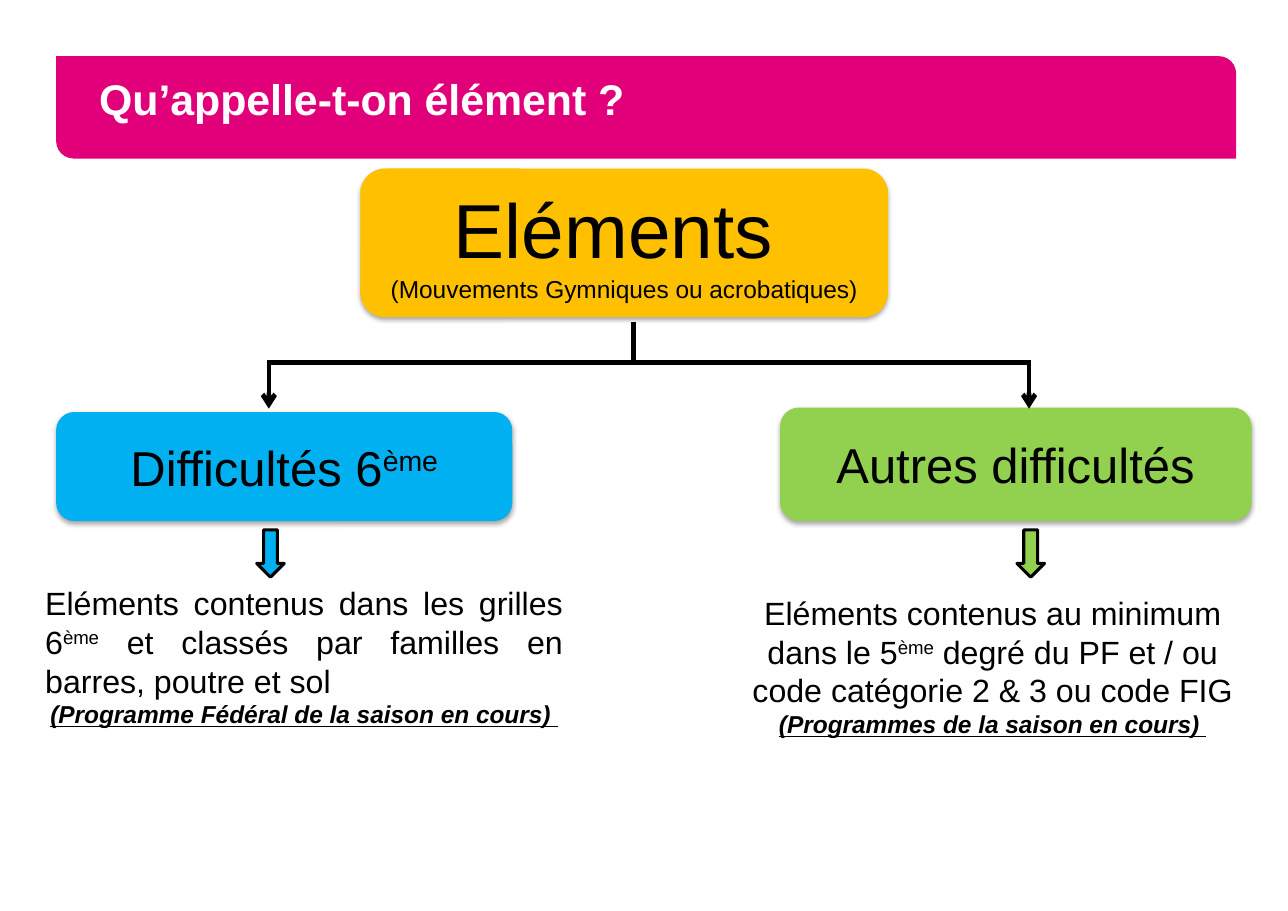
"""Build the slide that sorts gymnastic elements into two kinds of difficulty."""
from lxml import etree
from pptx import Presentation
from pptx.dml.color import RGBColor
from pptx.enum.shapes import MSO_CONNECTOR, MSO_SHAPE
from pptx.enum.text import MSO_ANCHOR, PP_ALIGN
from pptx.oxml.ns import qn
from pptx.util import Inches, Pt

ROUNDED, DOWN = MSO_SHAPE.ROUNDED_RECTANGLE, MSO_SHAPE.DOWN_ARROW
BANNER_SHAPE = MSO_SHAPE.ROUND_2_DIAG_RECTANGLE
STRAIGHT = MSO_CONNECTOR.STRAIGHT
TOP, MIDDLE = MSO_ANCHOR.TOP, MSO_ANCHOR.MIDDLE
LEFT, CENTER, JUSTIFY = PP_ALIGN.LEFT, PP_ALIGN.CENTER, PP_ALIGN.JUSTIFY

FONT = "Arial"
COLORS = {"pink": "E2007A", "amber": "FFC000", "blue": "00B0F0",
          "green": "92D050", "black": "000000", "white": "FFFFFF"}

TITLE = "Qu’appelle-t-on élément ?"
BANNER = (0.51, 0.51, 10.71, 0.93)
ROOT = {
    "box": (3.27, 1.53, 4.79, 1.35),
    "text": [(["Eléments "], 50, CENTER, False),
             (["(Mouvements Gymniques ou acrobatiques)"], 16, CENTER, False)],
}
BRANCHES = [
    {"color": "blue", "axis": 2.44, "box": (0.51, 3.74, 4.14, 0.99),
     "label": ["Difficultés 6", "ème"],
     "note_box": (0.3, 5.24, 4.92, 1.44),
     "note": [(["Eléments contenus dans les grilles 6", "ème",
                " et classés par familles en barres, poutre et sol "], 21, JUSTIFY, False),
              (["(Programme Fédéral de la saison en cours) "], 16, CENTER, True)]},
    {"color": "green", "axis": 9.34, "box": (7.08, 3.7, 4.28, 1.03),
     "label": ["Autres difficultés"],
     "note_box": (6.67, 5.33, 4.68, 1.8),
     "note": [(["Eléments contenus au minimum dans le 5", "ème",
                " degré du PF et / ou code catégorie 2 & 3 ou code FIG"], 21, CENTER, False),
              (["(Programmes de la saison en cours) "], 16, CENTER, True)]},
]
STEM_X, STEM_Y, BAR_Y, TIP_Y = 5.75, 2.92, 3.29, 3.71
ARROW_Y, ARROW_W, ARROW_H = 4.81, 0.25, 0.43


def rgb(name):
    return RGBColor.from_string(COLORS[name])


def inches(values):
    return [Inches(v) for v in values]


def write(shape, paragraphs, anchor):
    tf = shape.text_frame
    tf.word_wrap = True
    tf.vertical_anchor = anchor
    tf.margin_left = tf.margin_right = Inches(0.11)
    tf.margin_top = tf.margin_bottom = Inches(0.06)
    for i, (runs, size, align, emphasis) in enumerate(paragraphs):
        p = tf.paragraphs[0] if i == 0 else tf.add_paragraph()
        p.alignment = align
        font = p.font
        font.name, font.size = FONT, Pt(size)
        font.color.rgb = rgb("black")
        font.bold = font.italic = font.underline = emphasis
        for text in runs:
            r = p.add_run()
            r.text = text
            if text == "ème":
                r._r.get_or_add_rPr().set("baseline", "30000")


def add_filled(s, kind, box, color):
    sp = s.shapes.add_shape(kind, *inches(box))
    sp.shadow.inherit = False
    sp.fill.solid()
    sp.fill.fore_color.rgb = rgb(color)
    sp.line.fill.background()
    return sp


def add_box(s, box, color, paragraphs):
    sp = add_filled(s, ROUNDED, box, color)
    effects = sp._element.spPr.find(qn("a:effectLst"))
    shadow = etree.SubElement(effects, qn("a:outerShdw"), blurRad="40000",
                              dist="23000", dir="5400000", rotWithShape="0")
    tint = etree.SubElement(shadow, qn("a:srgbClr"), val=COLORS["black"])
    etree.SubElement(tint, qn("a:alpha"), val="35000")
    write(sp, paragraphs, MIDDLE)


def add_line(s, points, arrow=False):
    line = s.shapes.add_connector(STRAIGHT, *inches(points))
    line.line.color.rgb = rgb("black")
    line.line.width = Pt(3)
    if arrow:
        etree.SubElement(line.line._get_or_add_ln(), qn("a:tailEnd"), type="arrow")
    etree.SubElement(line._element.spPr, qn("a:effectLst"))


def add_title(s):
    banner = add_filled(s, BANNER_SHAPE, BANNER, "pink")
    banner.adjustments[0], banner.adjustments[1] = 0, 0.17
    title = s.shapes.title
    title._element.addprevious(banner._element)
    title.left, title.top, title.width, title.height = inches(BANNER)
    title.text = TITLE
    tf = title.text_frame
    tf.vertical_anchor = MIDDLE
    tf.margin_left = tf.margin_right = Inches(0.39)
    tf.margin_top = tf.margin_bottom = Inches(0.05)
    p = tf.paragraphs[0]
    p.alignment, p.line_spacing = LEFT, Pt(22)
    p.font.name, p.font.size, p.font.bold = FONT, Pt(28), True
    p.font.color.rgb = rgb("white")


def add_branch(s, branch):
    x, color = branch["axis"], branch["color"]
    add_box(s, branch["box"], color, [(branch["label"], 32, CENTER, False)])
    add_line(s, (x, BAR_Y - 0.02, x, TIP_Y), arrow=True)
    arrow = add_filled(s, DOWN, (x - 0.11, ARROW_Y, ARROW_W, ARROW_H), color)
    arrow.line.color.rgb = rgb("black")
    arrow.line.width = Pt(2)
    note = s.shapes.add_textbox(*inches(branch["note_box"]))
    write(note, branch["note"], TOP)


def main():
    prs = Presentation()
    prs.slide_width, prs.slide_height = Inches(11.69), Inches(8.27)
    s = prs.slides.add_slide(prs.slide_layouts[5])
    add_title(s)
    add_box(s, ROOT["box"], "amber", ROOT["text"])
    add_line(s, (STEM_X, STEM_Y, STEM_X, BAR_Y))
    add_line(s, (BRANCHES[0]["axis"], BAR_Y, BRANCHES[1]["axis"], BAR_Y))
    for branch in BRANCHES:
        add_branch(s, branch)
    prs.save("out.pptx")


if __name__ == "__main__":
    main()
